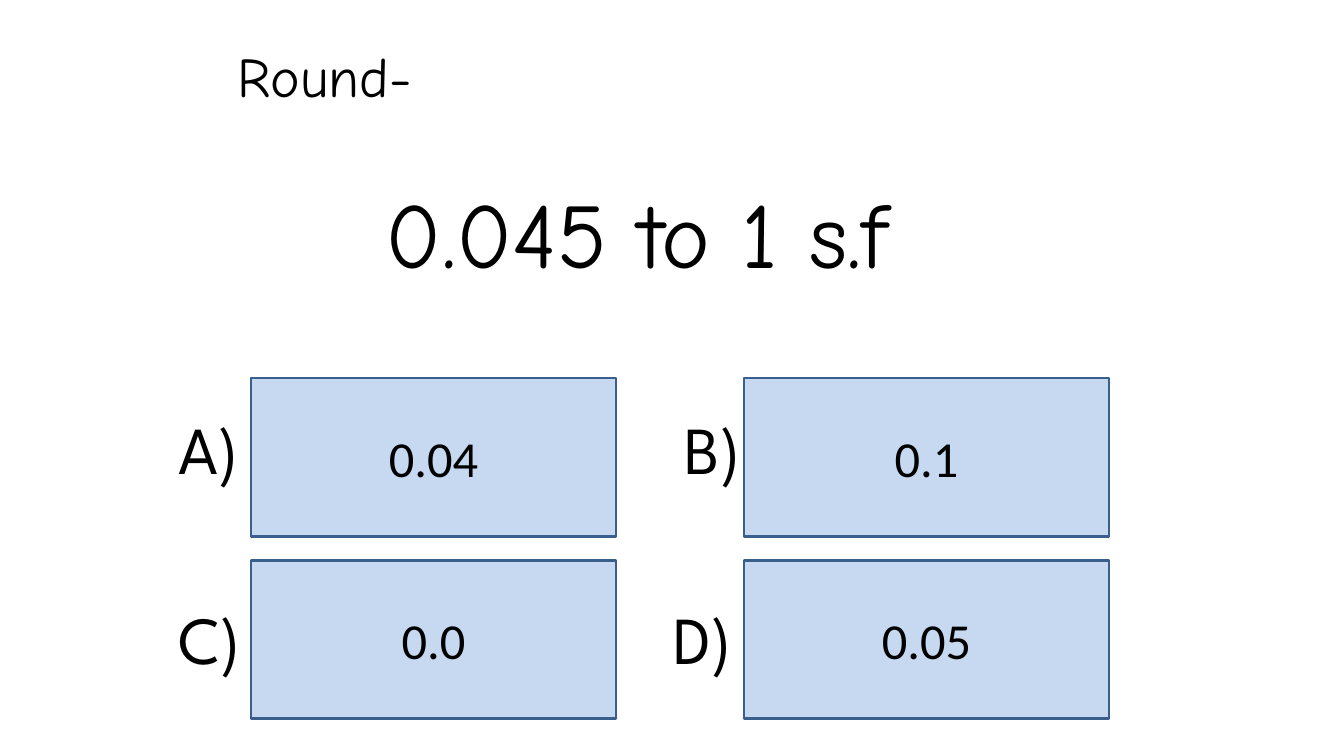
import dataclasses

import pptx
import pptx.dml.color
import pptx.enum.shapes
import pptx.enum.text
import pptx.util

ALIGN = pptx.enum.text.PP_ALIGN
ANCHOR = pptx.enum.text.MSO_ANCHOR
AUTO_SIZE = pptx.enum.text.MSO_AUTO_SIZE


@dataclasses.dataclass(frozen=True)
class Theme:
    ink: str = "000000"
    card_fill: str = "C6D9F1"
    card_line: str = "3A5F8C"
    line_width: int = 2
    question_font: str = "Comic Neue"
    label_font: str = "League Spartan"
    answer_font: str = "Calibri"
    prompt_size: int = 40
    question_size: int = 66
    label_size: int = 48
    answer_size: int = 36


class QuizSlide:
    """Places quiz elements; lengths are percentages of the slide's size."""

    def __init__(self, deck, theme):
        self.deck = deck
        self.theme = theme
        self.page = deck.slides.add_slide(deck.slide_layouts[5])

    def area(self, left, top, width, height):
        across, down = self.deck.slide_width / 100, self.deck.slide_height / 100
        return (round(left * across), round(top * down),
                round(width * across), round(height * down))

    def apply(self, target, values):
        for name, value in values.items():
            setattr(target, name, value)

    def fill_para(self, para, text, font, size, **layout):
        self.apply(para, layout)
        span = para.add_run()
        span.text = text
        self.apply(span.font, {"name": font, "size": pptx.util.Pt(size)})
        span.font.color.rgb = pptx.dml.color.RGBColor.from_string(self.theme.ink)

    def question(self, prompt, question, area):
        box = self.page.shapes.title
        self.apply(box, dict(zip(("left", "top", "width", "height"), self.area(*area))))
        frame = box.text_frame
        self.apply(frame, {"vertical_anchor": ANCHOR.TOP, "word_wrap": True,
                           "auto_size": AUTO_SIZE.NONE})
        theme = self.theme
        self.fill_para(frame.paragraphs[0], prompt, theme.question_font,
                       theme.prompt_size, alignment=ALIGN.LEFT)
        self.fill_para(frame.add_paragraph(), question, theme.question_font,
                       theme.question_size, alignment=ALIGN.CENTER,
                       space_before=pptx.util.Pt(48))

    def card(self, text, area):
        theme = self.theme
        box = self.page.shapes.add_shape(
            pptx.enum.shapes.MSO_SHAPE.RECTANGLE, *self.area(*area))
        box.shadow.inherit = False
        box.fill.solid()
        box.fill.fore_color.rgb = pptx.dml.color.RGBColor.from_string(theme.card_fill)
        box.line.color.rgb = pptx.dml.color.RGBColor.from_string(theme.card_line)
        box.line.width = pptx.util.Pt(theme.line_width)
        box.text_frame.vertical_anchor = ANCHOR.MIDDLE
        self.fill_para(box.text_frame.paragraphs[0], text, theme.answer_font,
                       theme.answer_size, alignment=ALIGN.CENTER)

    def label(self, text, area):
        frame = self.page.shapes.add_textbox(*self.area(*area)).text_frame
        self.apply(frame, {"word_wrap": False,
                           "auto_size": AUTO_SIZE.SHAPE_TO_FIT_TEXT})
        self.fill_para(frame.paragraphs[0], text, self.theme.label_font,
                       self.theme.label_size, alignment=ALIGN.LEFT)


def main():
    deck = pptx.Presentation()
    deck.slide_width = pptx.util.Inches(13.33)
    deck.slide_height = pptx.util.Inches(7.5)
    quiz = QuizSlide(deck, Theme())

    # Question
    quiz.question("Round-", "0.045 to 1 s.f", (16.95, 4.8, 60.84, 34.13))

    # Two-by-two answer grid: letter, answer, label left and width
    answers = [("A", "0.04", 12.53, 7.13), ("B", "0.1", 50.19, 6.3),
               ("C", "0.0", 12.53, 7.5), ("D", "0.05", 49.36, 7.13)]
    for index, (letter, answer, label_left, label_width) in enumerate(answers):
        row, column = divmod(index, 2)
        quiz.card(answer, (18.68 + 36.68 * column, 50 + 24.13 * row, 27.16, 20.93))
        quiz.label(f"{letter})", (label_left, 53.2 + 25.2 * row, label_width, 12.13))

    deck.save("out.pptx")


if __name__ == "__main__":
    main()
